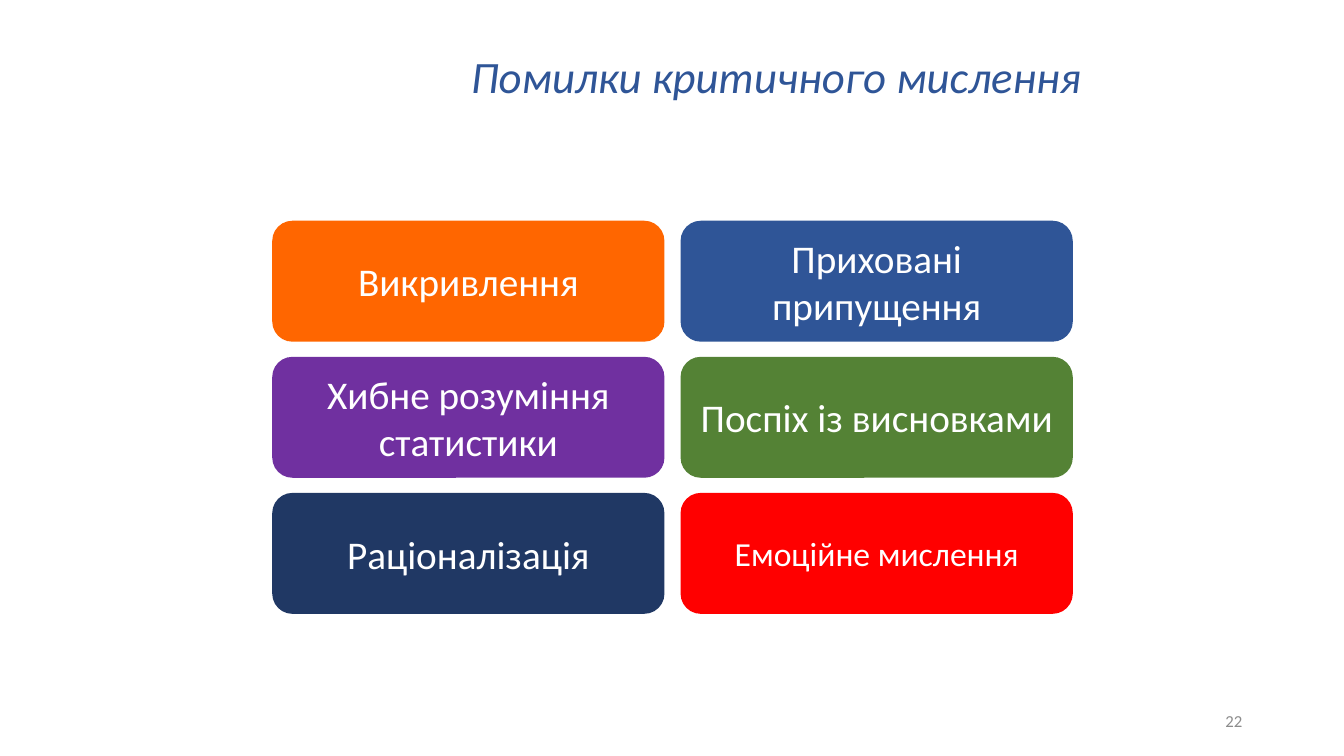
from dataclasses import dataclass

from pptx import Presentation
from pptx import util as u
from pptx.dml.color import RGBColor
from pptx.enum import shapes, text

PX = 9144  # EMU per px, 100 px to the inch


@dataclass(frozen=True)
class Theme:
    font: str = "Calibri"
    title_color: str = "2F5597"
    label_color: str = "FFFFFF"
    number_color: str = "8C8C8C"
    title_size: int = 32
    label_size: int = 28
    small_label_size: int = 24
    number_size: int = 12


@dataclass(frozen=True)
class Mistake:
    label: str
    fill: str
    size: int


THEME = Theme()

MISTAKES = [
    Mistake("Викривлення", "FF6600", THEME.label_size),
    Mistake("Приховані припущення", "2F5597", THEME.label_size),
    Mistake("Хибне розуміння статистики", "7030A0", THEME.label_size),
    Mistake("Поспіх із висновками", "548235", THEME.label_size),
    Mistake("Раціоналізація", "203864", THEME.label_size),
    Mistake("Емоційне мислення", "FF0000", THEME.small_label_size),
]

# Card grid, in px
COLUMNS = 2
GRID_LEFT, GRID_TOP = 270, 219
CARD_WIDTH, CARD_HEIGHT = 389, 120
COLUMN_STEP, ROW_STEP = 405, 135
CARD_MARGIN = 5


def px(length: int) -> u.Emu:
    return u.Emu(length * PX)


def write(shape, wording: str, size: int, color: str, align, italic: bool = False) -> None:
    """Set one paragraph of vertically centred text."""
    frame = shape.text_frame
    frame.text = wording
    frame.word_wrap = True
    frame.auto_size = text.MSO_AUTO_SIZE.NONE
    frame.vertical_anchor = text.MSO_ANCHOR.MIDDLE
    para = frame.paragraphs[0]
    para.alignment = align
    font = para.runs[0].font
    font.name = THEME.font
    font.size = u.Pt(size)
    font.italic = italic
    font.color.rgb = RGBColor.from_string(color)


def add_title(page, wording: str) -> None:
    title = page.shapes.title
    title.left, title.top, title.width, title.height = map(px, (457, 54, 802, 49))
    write(title, wording, THEME.title_size, THEME.title_color, text.PP_ALIGN.LEFT, italic=True)
    title.text_frame.paragraphs[0].line_spacing = 0.9


def add_card(page, mistake: Mistake, left: int, top: int) -> None:
    card = page.shapes.add_shape(
        shapes.MSO_SHAPE.ROUNDED_RECTANGLE,
        px(left), px(top), px(CARD_WIDTH), px(CARD_HEIGHT),
    )
    card.shadow.inherit = False
    card.fill.solid()
    card.fill.fore_color.rgb = RGBColor.from_string(mistake.fill)
    card.line.fill.background()
    write(card, mistake.label, mistake.size, THEME.label_color, text.PP_ALIGN.CENTER)
    card.text_frame.margin_left = card.text_frame.margin_right = px(CARD_MARGIN)


def add_page_number(page, number: str) -> None:
    box = page.shapes.add_textbox(px(942), px(695), px(300), px(40))
    write(box, number, THEME.number_size, THEME.number_color, text.PP_ALIGN.RIGHT)


def main() -> None:
    deck = Presentation()
    deck.slide_width, deck.slide_height = px(1333), px(750)
    page = deck.slides.add_slide(deck.slide_layouts.get_by_name("Title Only"))

    add_title(page, "Помилки критичного мислення")

    # Cards, row by row
    for index, mistake in enumerate(MISTAKES):
        row, column = divmod(index, COLUMNS)
        add_card(page, mistake, GRID_LEFT + column * COLUMN_STEP, GRID_TOP + row * ROW_STEP)

    add_page_number(page, "22")
    deck.save("out.pptx")


if __name__ == "__main__":
    main()
